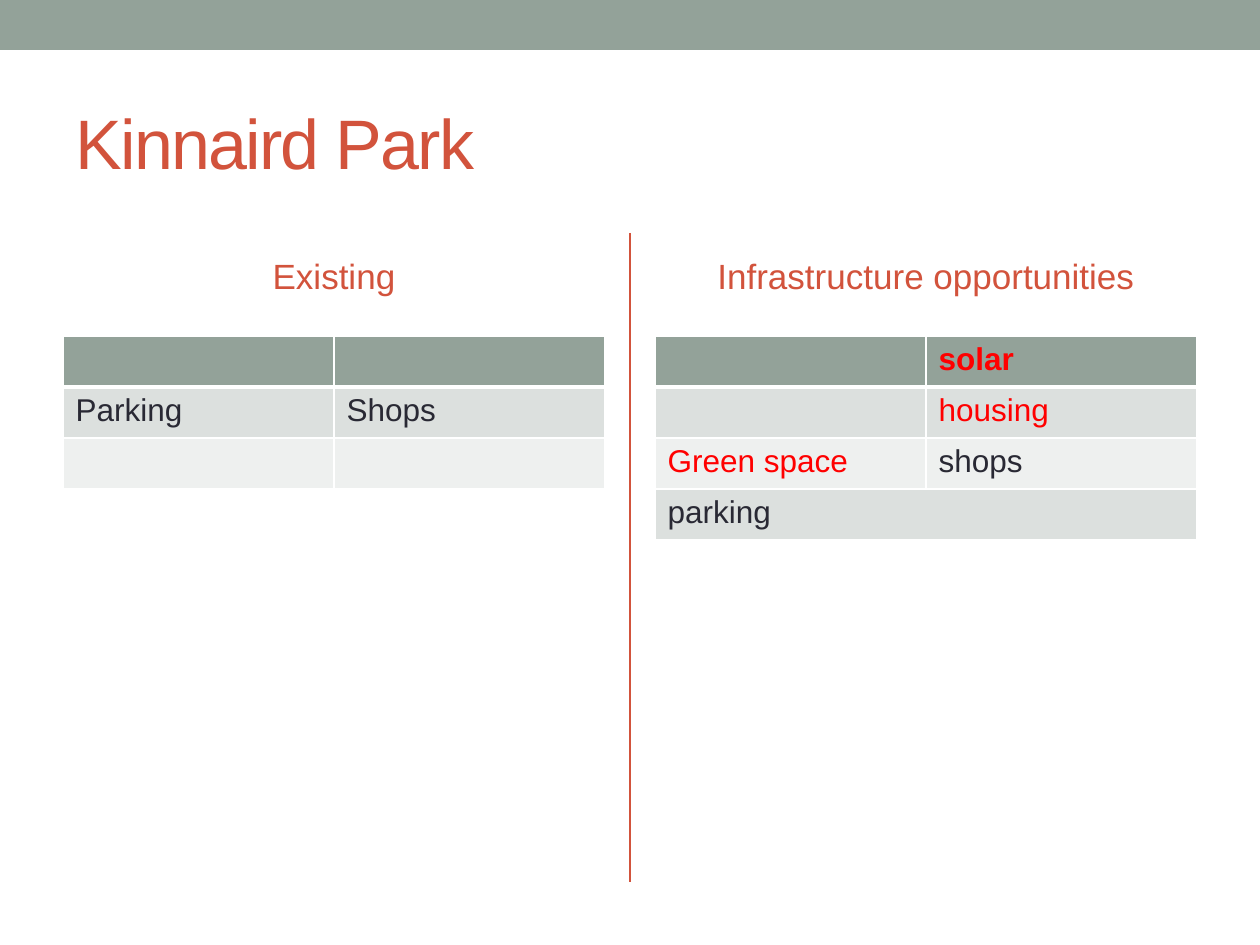
from lxml.etree import SubElement
from pptx import Presentation
from pptx.dml.color import RGBColor
from pptx.enum.shapes import MSO_CONNECTOR as Connector, MSO_SHAPE as Shape
from pptx.enum.text import MSO_ANCHOR as Anchor, PP_ALIGN as Align
from pptx.oxml import parse_xml
from pptx.oxml.ns import nsdecls, qn
from pptx.util import Pt

SAGE = RGBColor(0x93, 0xA2, 0x99)
BAND_DARK = RGBColor(0xDC, 0xE0, 0xDE)
BAND_LIGHT = RGBColor(0xEE, 0xF0, 0xEF)
RUST = RGBColor(0xD2, 0x53, 0x3C)
INK = RGBColor(0x29, 0x29, 0x34)
RED = RGBColor(0xFF, 0x00, 0x00)

TITLE = "Kinnaird Park"
COLUMNS = [
    ("Existing", [["", ""], ["Parking", "Shops"], ["", ""]]),
    ("Infrastructure opportunities",
     [["", "solar"], ["", "housing"], ["Green space", "shops"], ["parking", None]]),
]
PROPOSED = {"solar", "housing", "Green space"}

SCALE = 914400 / 126
WIDTH, HEIGHT = 1260, 945
MARGIN = 63
COLUMN_WIDTH, COLUMN_STEP = 542, 592
HEADING_TOP, HEADING_HEIGHT = 231, 88
TABLE_TOP, ROW_HEIGHT = 336, 51


def px(*lengths):
    return [round(length * SCALE) for length in lengths]


def write(frame, text, *, size, color, bold=False, align=Align.LEFT, spacing=0, before=0):
    paragraph = frame.paragraphs[0]
    paragraph.alignment = align
    paragraph.space_before = Pt(before)
    run = paragraph.add_run()
    run.text = text
    run.font.name = "Arial"
    run.font.size = Pt(size)
    run.font.bold = bold
    run.font.color.rgb = color
    if spacing:
        run.font._element.set("spc", str(spacing))


def add_label(slide, box, text, **style):
    frame = slide.shapes.add_textbox(*px(*box)).text_frame
    frame.word_wrap = True
    frame.vertical_anchor = Anchor.MIDDLE
    write(frame, text, **style)


def add_borders(cell, row):
    widths = {"L": 1, "R": 1, "T": 3 if row == 1 else 1, "B": 3 if row == 0 else 1}
    for index, (side, width) in enumerate(widths.items()):
        border = parse_xml(
            f'<a:ln{side} {nsdecls("a")} w="{Pt(width)}"><a:solidFill>'
            f'<a:srgbClr val="FFFFFF"/></a:solidFill></a:ln{side}>')
        cell._tc.get_or_add_tcPr().insert(index, border)


def add_grid(slide, left, rows):
    count = len(rows[0])
    box = px(left, TABLE_TOP, COLUMN_WIDTH, ROW_HEIGHT * len(rows))
    table = slide.shapes.add_table(len(rows), count, *box).table
    for r, row in enumerate(rows):
        for c, text in enumerate(row):
            cell = table.cell(r, c)
            cell.fill.solid()
            cell.fill.fore_color.rgb = SAGE if r == 0 else (BAND_LIGHT, BAND_DARK)[r % 2]
            add_borders(cell, r)
            if text:
                write(cell.text_frame, text, size=18, bold=r == 0,
                      color=RED if text in PROPOSED else INK)
        if None in row:
            table.cell(r, 0).merge(table.cell(r, count - 1))


def main():
    deck = Presentation()
    deck.slide_width, deck.slide_height = px(WIDTH, HEIGHT)
    slide = deck.slides.add_slide(deck.slide_layouts[6])

    banner = slide.shapes.add_shape(Shape.RECTANGLE, *px(0, 0, WIDTH, 50))
    banner.shadow.inherit = False
    banner.fill.solid()
    banner.fill.fore_color.rgb = SAGE
    banner.line.fill.background()

    divider = slide.shapes.add_connector(
        Connector.STRAIGHT, *px(WIDTH / 2, 233, WIDTH / 2, 882))
    divider.line.color.rgb = RUST
    divider.line.width = Pt(1.5)
    SubElement(divider._element.spPr, qn("a:effectLst"))

    add_label(slide, (MARGIN, 73, WIDTH - 2 * MARGIN, 136), TITLE,
              size=40, color=RUST, spacing=-100)
    for index, (heading, rows) in enumerate(COLUMNS):
        left = MARGIN + index * COLUMN_STEP
        add_label(slide, (left, HEADING_TOP, COLUMN_WIDTH, HEADING_HEIGHT), heading,
                  size=20, color=RUST, align=Align.CENTER, before=4)
        add_grid(slide, left, rows)

    deck.save("out.pptx")


if __name__ == "__main__":
    main()
